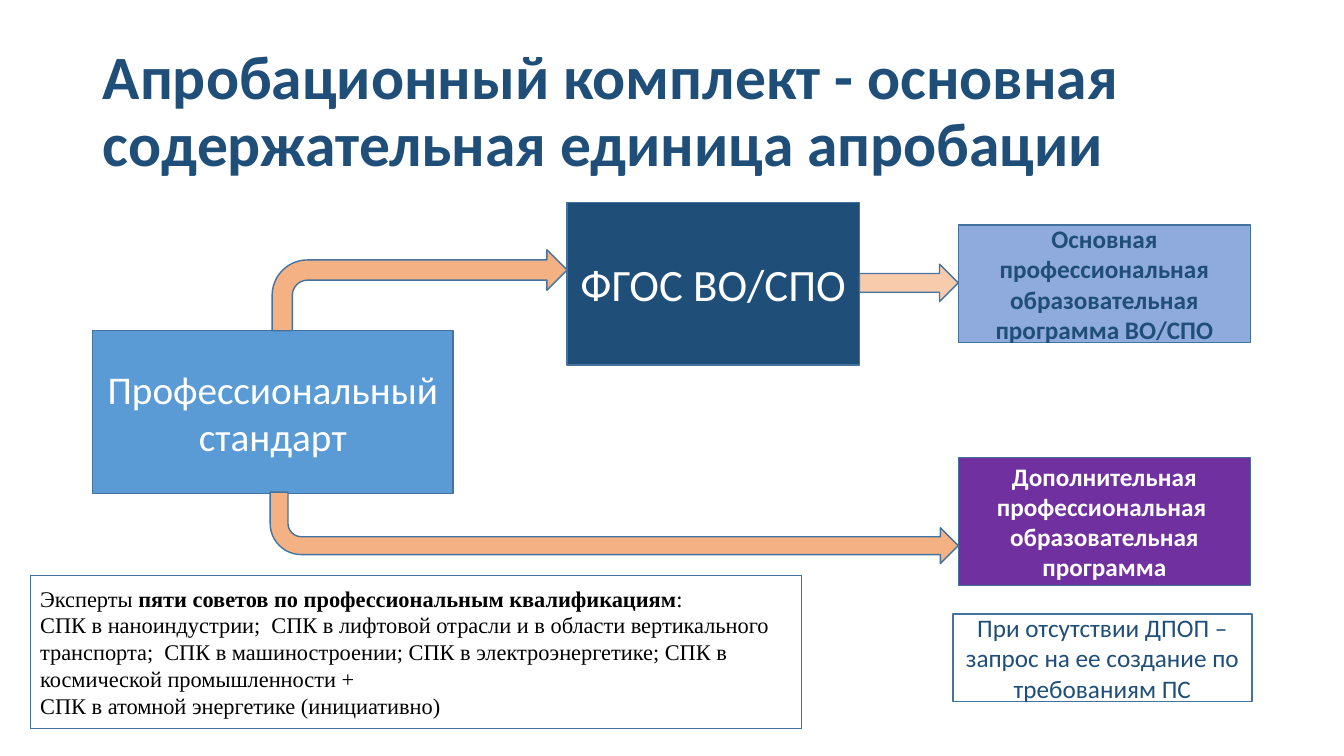
from dataclasses import dataclass

from pptx import Presentation
from pptx.dml.color import RGBColor
from pptx.enum.shapes import MSO_SHAPE
from pptx.enum.text import MSO_ANCHOR, MSO_AUTO_SIZE, PP_ALIGN
from pptx.oxml.ns import qn
from pptx.util import Inches, Pt

RECT = MSO_SHAPE.RECTANGLE
BENT = MSO_SHAPE.BENT_ARROW
RIGHT = MSO_SHAPE.RIGHT_ARROW
MIDDLE = MSO_ANCHOR.MIDDLE
FIXED = MSO_AUTO_SIZE.NONE
LEFT = PP_ALIGN.LEFT
CENTER = PP_ALIGN.CENTER

WIDE, HIGH = Inches(13.33), Inches(7.5)
COL, ROW = WIDE / 100, HIGH / 100


@dataclass(frozen=True)
class Theme:
    navy: str = "1F4E79"
    blue: str = "5B9BD5"
    pale: str = "8FAADC"
    plum: str = "7030A0"
    edge: str = "43739E"
    peach: str = "F4B183"
    cream: str = "F8CBAD"
    white: str = "FFFFFF"
    black: str = "000000"
    sans: str = "Calibri"
    serif: str = "Times New Roman"
    title: int = 44
    large: int = 32
    mid: int = 28
    small: int = 18
    note: int = 16
    rule: int = 1


THEME = Theme()


@dataclass(frozen=True)
class Box:
    col: float
    row: float
    cols: float
    rows: float

    def cell(self, col, row, cols, rows):
        return Box(self.col + col, self.row + row, cols, rows)

    def place(self):
        return (round(self.col * COL), round(self.row * ROW),
                round(self.cols * COL), round(self.rows * ROW))


def color(code):
    return RGBColor.from_string(code)


def style(para, size, ink, bold=None, face=THEME.sans, align=CENTER):
    para.alignment = align
    font = para.font
    font.name, font.size, font.bold = face, Pt(size), bold
    font.color.rgb = color(ink)


def draw(slide, kind, box, fill):
    shape = slide.shapes.add_shape(kind, *box.place())
    shape.shadow.inherit = False
    shape.fill.solid()
    shape.fill.fore_color.rgb = color(fill)
    shape.line.color.rgb = color(THEME.edge)
    shape.line.width = Pt(THEME.rule)
    return shape


def panel(slide, box, fill):
    frame = draw(slide, RECT, box, fill).text_frame
    frame.word_wrap = True
    frame.vertical_anchor = MIDDLE
    return frame


def head(slide, box):
    title = slide.shapes.title
    title.left, title.top, title.width, title.height = box.place()
    frame = title.text_frame
    frame.text = "Апробационный комплект - основная содержательная единица апробации"
    frame.auto_size = FIXED
    frame.vertical_anchor = MIDDLE
    para = frame.paragraphs[0]
    para.line_spacing = 0.9
    style(para, THEME.title, THEME.navy, True, align=LEFT)


def flow(slide, box):
    cards = [
        ("Профессиональный стандарт", (0, 16.95, 26.8, 21.5),
         THEME.blue, THEME.mid, THEME.white, False),
        ("ФГОС ВО/СПО", (35.3, 0, 21.75, 21.5),
         THEME.navy, THEME.large, THEME.white, False),
        ("Основная профессиональная образовательная программа ВО/СПО",
         (64.4, 2.95, 21.75, 15.6),
         THEME.pale, THEME.small, THEME.navy, True),
        ("Дополнительная профессиональная  образовательная программа",
         (64.4, 33.7, 21.75, 16.95),
         THEME.plum, THEME.small, THEME.white, True),
        ("При отсутствии ДПОП – запрос на ее создание по требованиям ПС",
         (64, 54.4, 22.25, 11.6),
         THEME.white, THEME.small, THEME.navy, False),
    ]
    for text, spot, fill, size, ink, bold in cards:
        frame = panel(slide, box.cell(*spot), fill)
        frame.text = text
        style(frame.paragraphs[0], size, ink, bold)

    draw(slide, BENT, box.cell(13.35, 6.25, 21.95, 10.7), THEME.peach)
    down = draw(slide, BENT, box.cell(13.2, 38.3, 51.2, 9.45), THEME.peach)
    down._element.spPr.find(qn("a:xfrm")).set("flipV", "1")
    draw(slide, RIGHT, box.cell(57.05, 8.15, 7.35, 4.95), THEME.cream)


def experts(slide, box):
    lines = [
        [("Эксперты ", False),
         ("пяти советов по профессиональным квалификациям", True),
         (":", False)],
        [("СПК в наноиндустрии;  СПК в лифтовой отрасли и в области "
          "вертикального транспорта;  СПК в машиностроении; СПК в "
          "электроэнергетике; СПК в космической промышленности +", False)],
        [("СПК в атомной энергетике (инициативно)", False)],
    ]
    frame = panel(slide, box, THEME.white)
    for index, pieces in enumerate(lines):
        para = frame.add_paragraph() if index else frame.paragraphs[0]
        style(para, THEME.note, THEME.black, face=THEME.serif, align=LEFT)
        for text, bold in pieces:
            run = para.add_run()
            run.text = text
            run.font.bold = bold


def main():
    deck = Presentation()
    deck.slide_width, deck.slide_height = WIDE, HIGH
    slide = deck.slides.add_slide(deck.slide_layouts[5])
    head(slide, Box(6.9, 5.3, 86.25, 19.33))
    flow(slide, Box(6.9, 26.8, 86.25, 66))
    experts(slide, Box(2.25, 76.1, 57.4, 20.25))
    deck.save("out.pptx")


if __name__ == "__main__":
    main()
